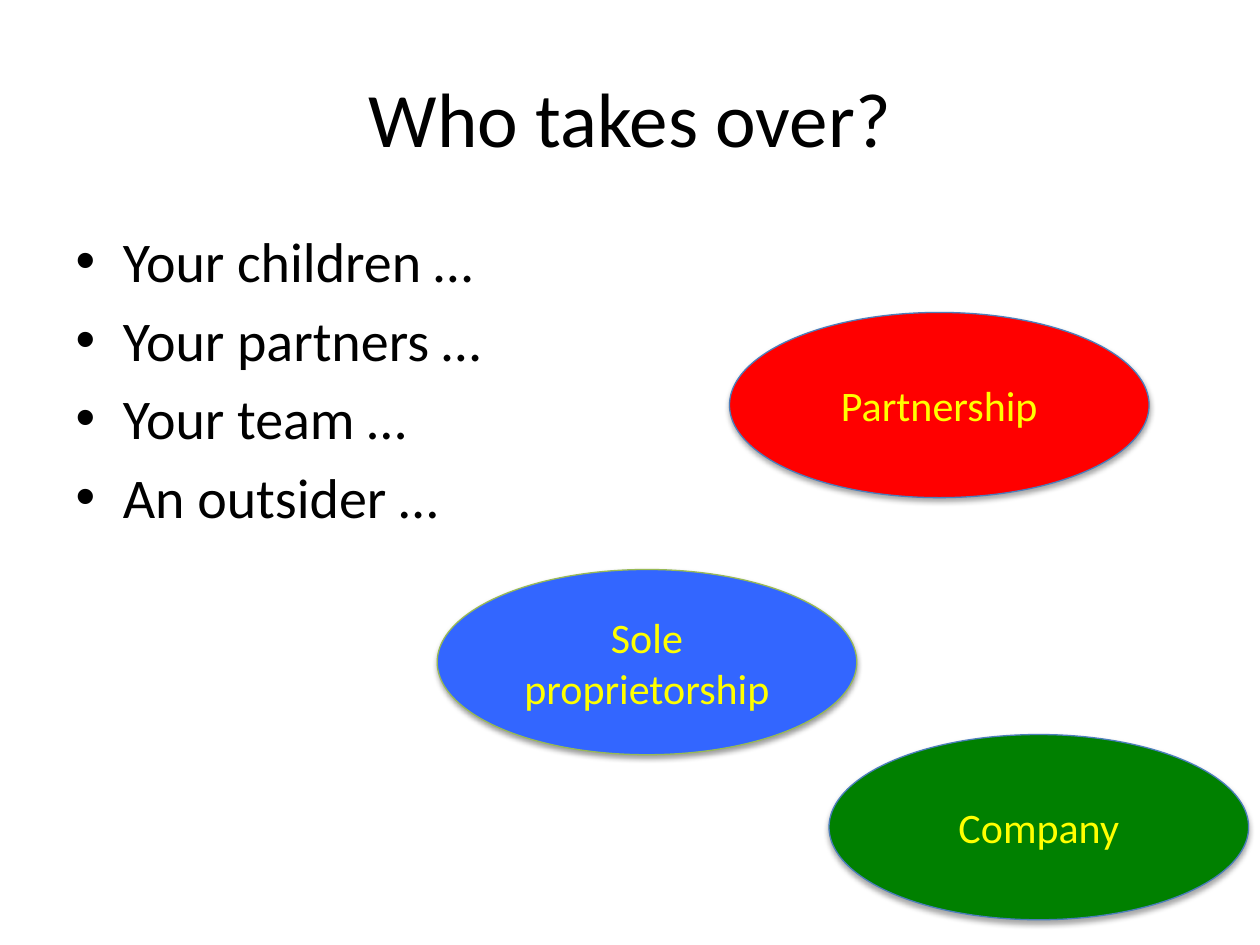
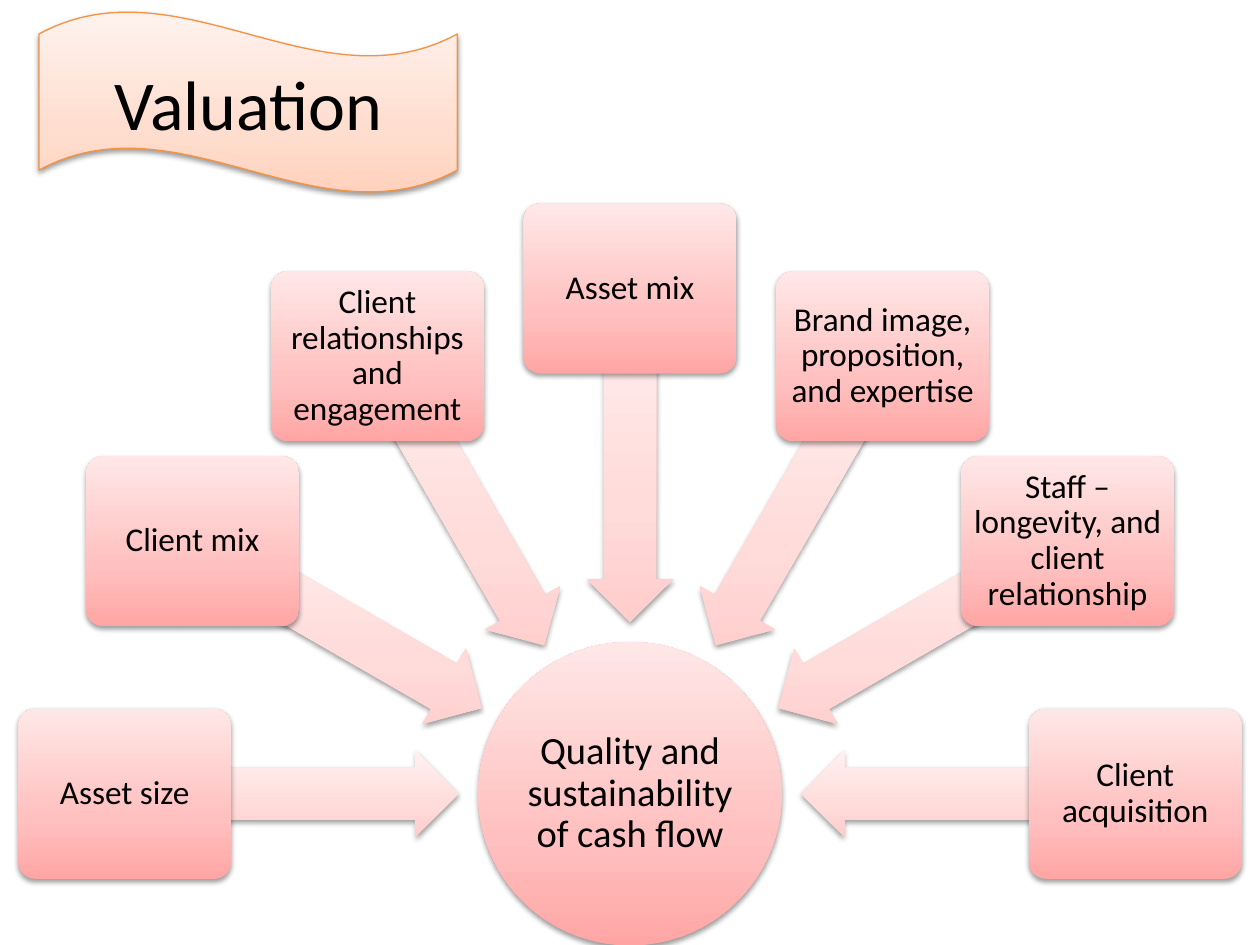
import copy
import math

import pptx
import pptx.util
from lxml import etree
from pptx.dml.color import RGBColor
from pptx.enum.shapes import MSO_SHAPE
from pptx.enum.text import MSO_ANCHOR, PP_ALIGN
from pptx.oxml.ns import qn

Inches = pptx.util.Inches
FONT = "Calibri"
BLACK = RGBColor(0x00, 0x00, 0x00)
YELLOW = RGBColor(0xFF, 0xFF, 0x00)
RED = RGBColor(0xFF, 0x00, 0x00)
GREEN = RGBColor(0x00, 0x80, 0x00)
BLUE = RGBColor(0x33, 0x66, 0xFF)
BLUE_EDGE = RGBColor(0x4B, 0x7E, 0xBC)
GREEN_EDGE = RGBColor(0x98, 0xB9, 0x55)
ORANGE_EDGE = RGBColor(0xF6, 0x92, 0x40)
PINK = [RGBColor(0xFF, 0xA6, 0xA5), RGBColor(0xFF, 0xC0, 0xBF), RGBColor(0xFF, 0xE7, 0xE7)]
PALE_PINK = [RGBColor(0xFF, 0xCD, 0xCC), RGBColor(0xFF, 0xDB, 0xDA), RGBColor(0xFF, 0xF1, 0xF1)]
PEACH = [RGBColor(0xFF, 0xD2, 0xBD), RGBColor(0xFF, 0xDE, 0xD0), RGBColor(0xFF, 0xF2, 0xED)]
STOPS = (0, 0.35, 1)

TITLE = "Who takes over?"
SUCCESSORS = ["Your children …", "Your partners …", "Your team …", "An outsider …"]
STRUCTURES = [
    ("Sole proprietorship", 3.47, 4.52, BLUE, GREEN_EDGE, 38, 1.6),
    ("Partnership", 5.79, 2.48, RED, BLUE_EDGE, 35, 1.8),
    ("Company", 6.58, 5.83, GREEN, BLUE_EDGE, 35, 1.8),
]
STRUCTURE_SIZE = (3.33, 1.47)

BANNER = "Valuation"
HUB = "Quality and sustainability of cash flow"
DRIVERS = [
    "Asset size",
    "Client mix",
    "Client relationships and engagement",
    "Asset mix",
    "Brand image, proposition, and expertise",
    "Staff – longevity, and client relationship",
    "Client acquisition",
]
HUB_X, HUB_Y, HUB_SIZE = 5, 6.3, 2.41
BOX_RADIUS, BOX_SIZE = 4.01, (1.69, 1.35)
ARROW_RADIUS, ARROW_SIZE = 2.69, (2.66, 0.69)


def paint(s, fill):
    if isinstance(fill, RGBColor):
        s.fill.solid()
        s.fill.fore_color.rgb = fill
        return
    s.fill.gradient()
    s.fill.gradient_angle = 90
    grad = s._element.spPr.find(qn("a:gradFill"))
    grad.set("rotWithShape", "0")
    stops = grad.find(qn("a:gsLst"))
    stops.append(copy.deepcopy(stops[0]))
    for stop, color, position in zip(s.fill.gradient_stops, fill, STOPS):
        stop.color.rgb = color
        stop.position = position


def cast_shadow(s, opacity, distance):
    s.shadow.inherit = False
    effects = s._element.spPr.find(qn("a:effectLst"))
    shadow = etree.SubElement(effects, qn("a:outerShdw"), blurRad="40000",
                              dist=str(pptx.util.Pt(distance)), dir="5400000", rotWithShape="0")
    color = etree.SubElement(shadow, qn("a:srgbClr"), val=str(BLACK))
    etree.SubElement(color, qn("a:alpha"), val=str(opacity * 1000))


def add_shape(slide, kind, x, y, size, fill, edge=None, opacity=38, distance=1.6):
    s = slide.shapes.add_shape(kind, *map(Inches, (x, y, *size)))
    paint(s, fill)
    if edge is None:
        s.line.fill.background()
    else:
        s.line.color.rgb = edge
        s.line.width = pptx.util.Pt(0.75)
    cast_shadow(s, opacity, distance)
    return s


def style(p, size, color=BLACK):
    p.font.name = FONT
    p.font.size = pptx.util.Pt(size)
    p.font.color.rgb = color


def write(s, text, size, color=BLACK, inset=None, spacing=None):
    tf = s.text_frame
    tf.word_wrap = True
    tf.vertical_anchor = MSO_ANCHOR.MIDDLE
    if inset is not None:
        tf.margin_left = tf.margin_right = tf.margin_top = tf.margin_bottom = Inches(inset)
    p = tf.paragraphs[0]
    p.text = text
    p.alignment = PP_ALIGN.CENTER
    p.line_spacing = spacing
    style(p, size, color)


def add_around_hub(slide, kind, angle, radius, size, fill):
    x = HUB_X + radius * math.cos(math.radians(angle)) - size[0] / 2
    y = HUB_Y + radius * math.sin(math.radians(angle)) - size[1] / 2
    return add_shape(slide, kind, x, y, size, fill)


def build_succession(prs):
    slide = prs.slides.add_slide(prs.slide_layouts[1])
    title, body = slide.placeholders
    title.left, title.top, title.width, title.height = map(Inches, (0.5, 0.3, 9, 1.25))
    write(title, TITLE, 44)
    body.left, body.top, body.width, body.height = map(Inches, (0.5, 1.75, 9, 4.95))
    body.text_frame.text = "\n".join(SUCCESSORS)
    for p in body.text_frame.paragraphs:
        style(p, 32)
    for text, x, y, fill, edge, opacity, distance in STRUCTURES:
        s = add_shape(slide, MSO_SHAPE.OVAL, x, y, STRUCTURE_SIZE, fill, edge, opacity, distance)
        write(s, text, 24, YELLOW)


def build_valuation(prs):
    slide = prs.slides.add_slide(prs.slide_layouts[6])
    hub = add_around_hub(slide, MSO_SHAPE.OVAL, 0, 0, (HUB_SIZE, HUB_SIZE), PINK)
    write(hub, HUB, 22, inset=0.02, spacing=0.9)
    step = 180 / (len(DRIVERS) - 1)
    for i, driver in enumerate(DRIVERS):
        angle = 180 + i * step
        arrow = add_around_hub(slide, MSO_SHAPE.LEFT_ARROW, angle, ARROW_RADIUS, ARROW_SIZE, PALE_PINK)
        arrow.rotation = angle % 360
        arrow.adjustments[0] = 0.6
        box = add_around_hub(slide, MSO_SHAPE.ROUNDED_RECTANGLE, angle, BOX_RADIUS, BOX_SIZE, PINK)
        box.adjustments[0] = 0.1
        write(box, driver, 19, inset=0.04, spacing=0.9)
    banner = add_shape(slide, MSO_SHAPE.WAVE, 0.31, 0.09, (3.32, 1.44), PEACH, ORANGE_EDGE)
    write(banner, BANNER, 40)


def main():
    prs = pptx.Presentation()
    prs.slide_width, prs.slide_height = Inches(10), Inches(7.5)
    build_succession(prs)
    build_valuation(prs)
    prs.save("out.pptx")


if __name__ == "__main__":
    main()
